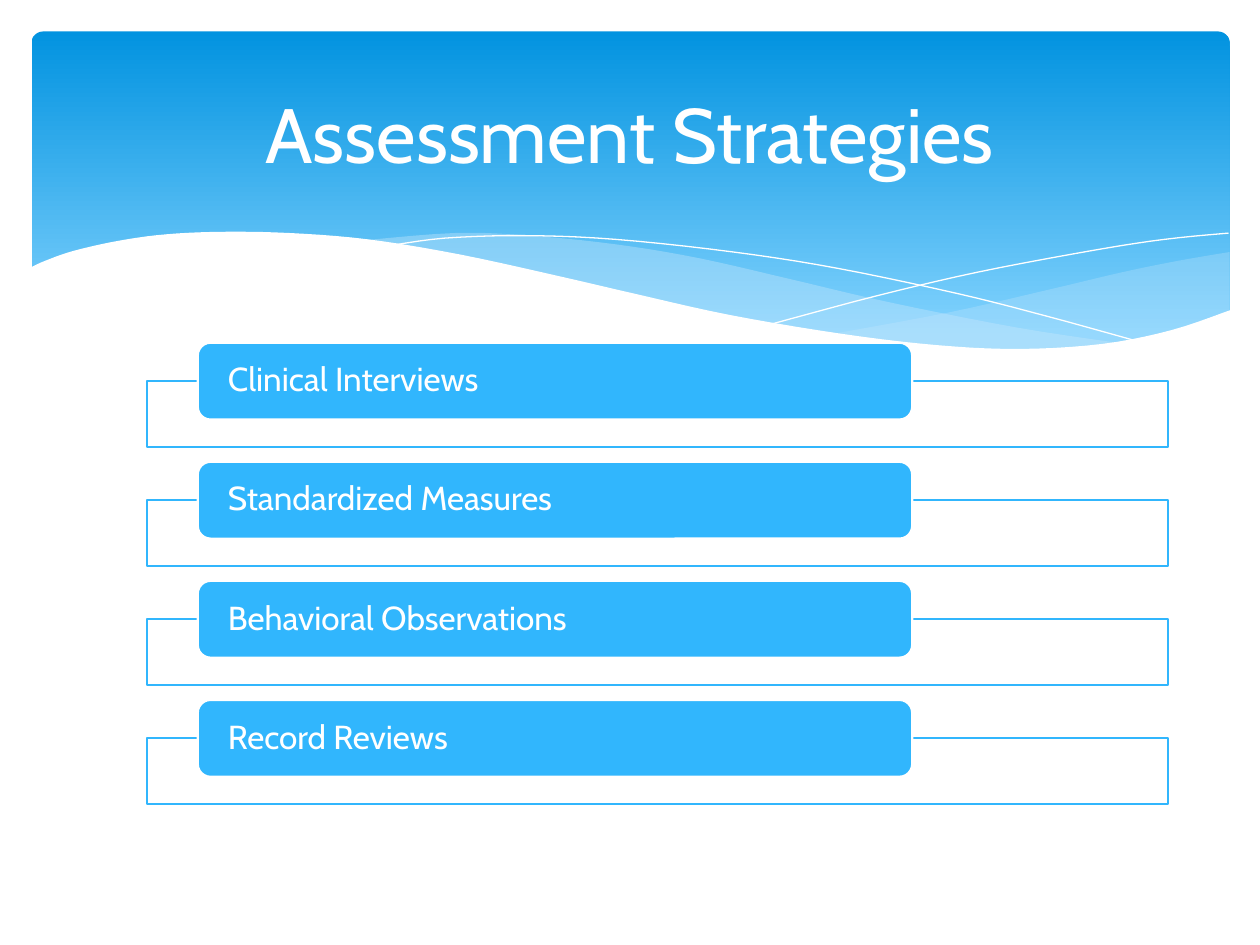
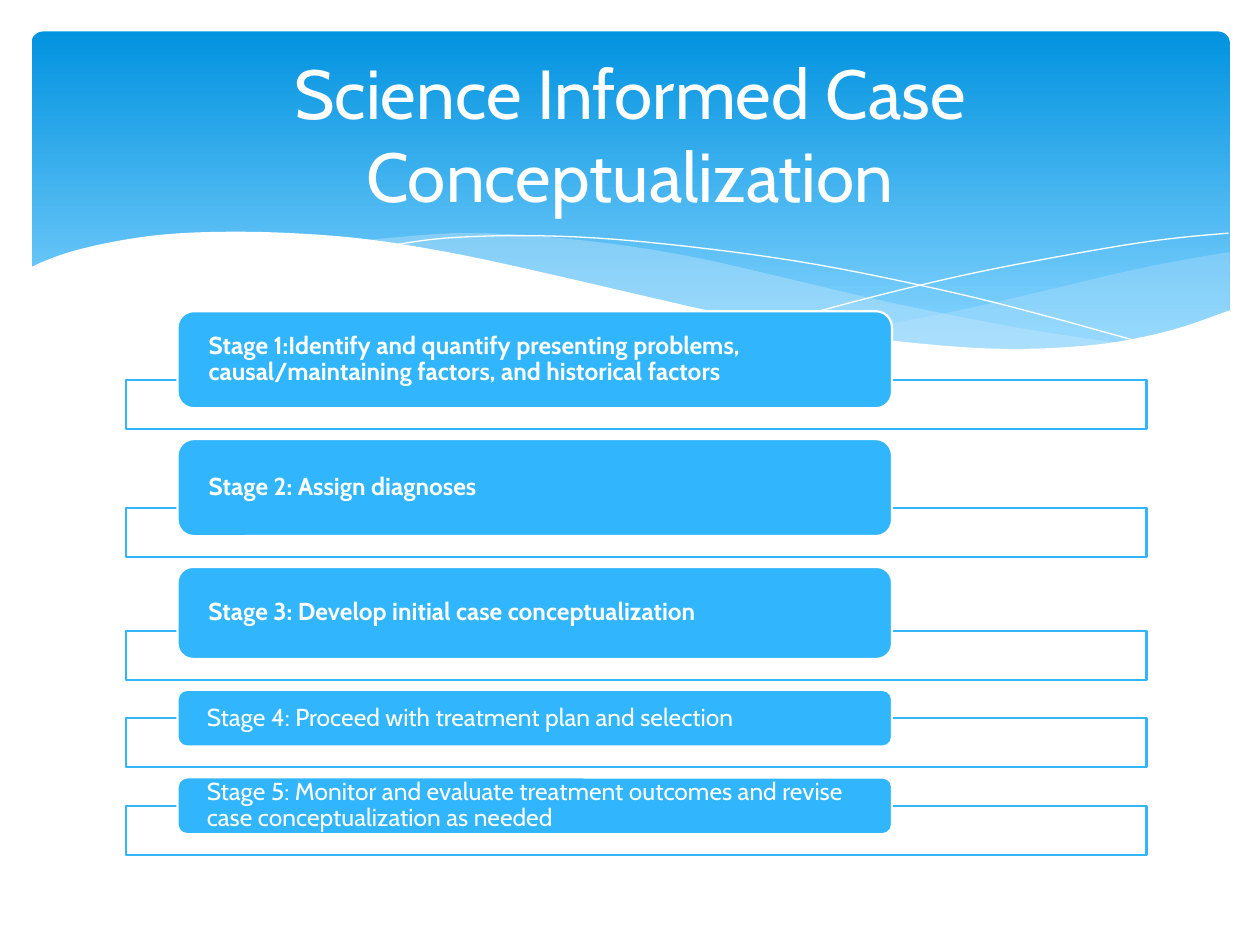
from itertools import pairwise
from lxml import etree
from pptx import Presentation
from pptx import util as u
from pptx.dml.color import RGBColor
from pptx.enum import shapes, text
from pptx.oxml import ns

HUES = {"deep": "0293E0", "sky": "83D3FE", "mist": "C6E7FC",
        "blue": "31B6FD", "white": "FFFFFF"}
FACE = "Cabin"

DECKS = [
    {"title": "Assessment Strategies", "size": 44, "left": 1.17, "top": 2.72,
     "inset": 0.4, "frame": 0.52, "gap": 0.12, "type": 19,
     "rows": [("Clinical Interviews", 0.61, False),
              ("Standardized Measures", 0.61, False),
              ("Behavioral Observations", 0.61, False),
              ("Record Reviews", 0.61, False)]},
    {"title": "Science Informed Case Conceptualization", "size": 39.6,
     "left": 1, "top": 2.47, "inset": 0.41, "frame": 0.39, "gap": 0.08,
     "type": 14,
     "rows": [("Stage 1:Identify and quantify presenting problems, "
               "causal/maintaining factors, and historical factors", 0.77, True),
              ("Stage 2: Assign diagnoses", 0.77, True),
              ("Stage 3: Develop initial case conceptualization", 0.73, True),
              ("Stage 4: Proceed with treatment plan and selection", 0.45, False),
              ("Stage 5: Monitor and evaluate treatment outcomes and revise "
               "case conceptualization as needed", 0.45, False)]},
]

WAVES = [
    {"fill": "mist", "alpha": 29, "arcs": [
        [(9.76, 2), (9.35, 2.07), (8.91, 2.16), (8.32, 2.3), (7.53, 2.48),
         (6.61, 2.65)],
        [(6.61, 2.65), (7.05, 2.71), (7.57, 2.76), (8.03, 2.78), (8.54, 2.76),
         (8.97, 2.7), (9.35, 2.62), (9.76, 2.47)]]},
    {"fill": "mist", "alpha": 40, "arcs": [
        [(8.93, 2.73), (8.07, 2.6), (7.06, 2.4), (6.29, 2.22), (5.55, 2.05),
         (4.89, 1.94), (4.2, 1.87), (3.61, 1.85), (2.86, 1.91)],
        [(2.86, 1.91), (3.62, 2.03), (4.49, 2.22), (5.3, 2.4), (6.18, 2.58),
         (6.95, 2.7), (7.48, 2.76), (8.07, 2.78), (8.57, 2.77), (8.93, 2.73)]]},
    {"line": "white", "arcs": [
        [(3.09, 1.95), (3.53, 1.89), (4.16, 1.87), (4.89, 1.9), (5.82, 2),
         (6.65, 2.13), (7.6, 2.33), (8.31, 2.51), (9.07, 2.72)]]},
    {"line": "white", "arcs": [
        [(6.13, 2.57), (6.95, 2.35), (7.76, 2.16), (8.66, 1.99), (9.24, 1.9),
         (9.75, 1.85)]]},
    {"fill": "white", "arcs": [
        [(9.77, 2.46), (9.3, 2.62), (8.75, 2.73), (8.09, 2.77), (7.44, 2.74),
         (6.68, 2.65), (5.79, 2.5), (5.03, 2.33), (4.47, 2.2), (3.65, 2.02),
         (2.92, 1.9), (2.3, 1.85), (1.77, 1.84), (1.32, 1.86), (0.95, 1.91),
         (0.59, 1.99), (0.36, 2.07), (0.23, 2.13)],
        [(0.23, 3.29), (9.77, 3.29)]]},
]


def hue(name):
    return RGBColor.from_string(HUES[name])


def put(obj, **vals):
    for key, val in vals.items():
        setattr(obj, key, val)


def paint(shape, fill=None, alpha=None, line=None, width=0):
    shape.shadow.inherit = False
    if fill:
        shape.fill.solid()
        shape.fill.fore_color.rgb = hue(fill)
    else:
        shape.fill.background()
    if alpha:
        tone = shape.fill._xPr.find(".//" + ns.qn("a:srgbClr"))
        etree.SubElement(tone, ns.qn("a:alpha"), val=str(alpha * 1000))
    if line:
        shape.line.color.rgb = hue(line)
        shape.line.width = u.Pt(width)
    else:
        shape.line.fill.background()


def add_box(slide, kind, *area):
    return slide.shapes.add_shape(kind, *map(u.Inches, area))


def write(shape, words, font, para, frame):
    body = shape.text_frame
    put(body, word_wrap=True, vertical_anchor=text.MSO_ANCHOR.MIDDLE, **frame)
    line = body.paragraphs[0]
    put(line, **para)
    run = line.add_run()
    run.text = words
    put(run.font, name=FACE, **font)
    run.font.color.rgb = hue("white")


def smooth(knots, steps=5):
    ends = [knots[0], *knots, knots[-1]]
    dots = [knots[0]]
    for i in range(len(knots) - 1):
        quad = list(zip(*ends[i:i + 4]))
        for n in range(1, steps + 1):
            t = n / steps
            dots.append(tuple(
                b + (c - a) * t / 2 + (2 * a - 5 * b + 4 * c - d) * t**2 / 2
                + (3 * b - a - 3 * c + d) * t**3 / 2 for a, b, c, d in quad))
    return dots


def add_wave(slide, arcs, **look):
    dots = [tuple(map(u.Inches, dot)) for arc in arcs for dot in smooth(arc)]
    dots = dots[:1] + [b for a, b in pairwise(dots) if a != b]
    form = slide.shapes.build_freeform(*dots[0], scale=1.0)
    form.add_line_segments(dots[1:], close="fill" in look)
    paint(form.convert_to_shape(), **look)


def add_band(slide):
    band = add_box(slide, shapes.MSO_SHAPE.ROUNDED_RECTANGLE,
                   0.25, 0.25, 9.51, 2.7)
    band.adjustments[0] = 0.034
    paint(band)
    band.fill.gradient()
    band.fill.gradient_angle = 270
    for stop, name, place in zip(band.fill.gradient_stops,
                                 ("deep", "sky"), (0, 0.9)):
        stop.color.rgb = hue(name)
        stop.position = place
    for wave in WAVES:
        add_wave(slide, **wave)


def add_rows(slide, deck):
    lap = min(high for _, high, _ in deck["rows"]) / 2
    edge = {"margin_left": u.Inches(0.21), "margin_right": u.Inches(0.21),
            "margin_top": 0, "margin_bottom": 0}
    para = {"alignment": text.PP_ALIGN.LEFT, "line_spacing": 0.9}
    top = deck["top"]
    for words, high, bold in deck["rows"]:
        base = top + high - lap
        frame = add_box(slide, shapes.MSO_SHAPE.RECTANGLE,
                        deck["left"], base, 8.1, deck["frame"])
        paint(frame, fill="white", alpha=90, line="blue", width=1.25)
        pill = add_box(slide, shapes.MSO_SHAPE.ROUNDED_RECTANGLE,
                       deck["left"] + deck["inset"], top, 5.67, high)
        paint(pill, fill="blue", line="white", width=1.25)
        write(pill, words, {"size": u.Pt(deck["type"]), "bold": bold},
              para, edge)
        top = base + deck["frame"] + deck["gap"]


def add_title(slide, deck):
    box = slide.shapes.add_textbox(*map(u.Inches, (0.5, 0.37, 9, 1.37)))
    write(box, deck["title"], {"size": u.Pt(deck["size"])},
          {"alignment": text.PP_ALIGN.CENTER}, {})


def main():
    show = Presentation()
    put(show, slide_width=u.Inches(10), slide_height=u.Inches(7.5))
    for deck in DECKS:
        slide = show.slides.add_slide(show.slide_layouts[6])
        add_band(slide)
        add_rows(slide, deck)
        add_title(slide, deck)
    show.save("out.pptx")


if __name__ == "__main__":
    main()
